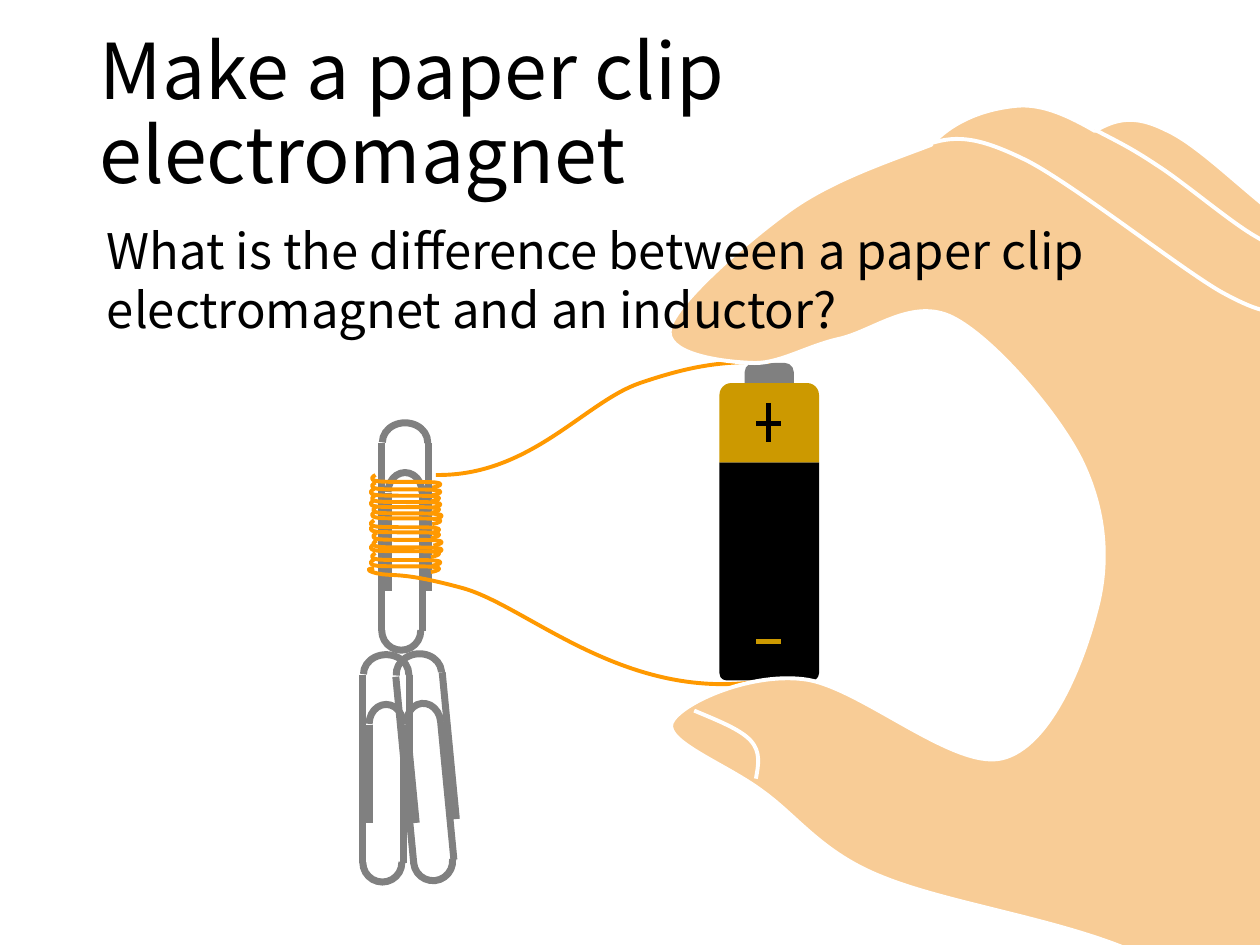
import math

from lxml import etree
from pptx import Presentation
from pptx import util as u
from pptx.dml.color import RGBColor
from pptx.enum import shapes, text
from pptx.oxml.ns import qn

COLORS = {"ink": "000000", "steel": "808080", "brass": "CC9900",
          "copper": "FF9900", "skin": "F8CC96", "edge": "FFFFFF"}
FONT = "Noto Sans CJK KR"
CM_PER_UNIT = 2.54

PALM = [
    (9.76, 10.04),
    (9.89, 10.15), (10.02, 10.21), (9.6, 9.9), (9.19, 9.59), (7.99, 8.56), (7.27, 8.16),
    (6.55, 7.76), (5.89, 7.77), (5.28, 7.52), (4.66, 7.27), (4.18, 6.9), (3.58, 6.67),
    (2.99, 6.44), (2.18, 6.32), (1.69, 6.12), (1.21, 5.93), (1.02, 5.64), (0.74, 5.44),
    (0.46, 5.23), (-0.03, 5.05), (0.02, 4.9), (0.08, 4.75), (0.62, 4.5), (1.06, 4.55),
    (1.49, 4.59), (2.25, 5.27), (2.64, 5.18), (3.03, 5.09), (3.29, 4.4), (3.39, 4.01),
    (3.5, 3.61), (3.46, 3.2), (3.27, 2.81), (3.08, 2.43), (2.57, 1.84), (2.25, 1.68),
    (1.93, 1.52), (1.62, 1.79), (1.35, 1.85), (1.08, 1.91), (0.86, 2.06), (0.64, 2.04),
    (0.41, 2.03), (-0.05, 1.97), (0.01, 1.76), (0.06, 1.56), (0.62, 1.07), (0.97, 0.82),
    (1.31, 0.58), (1.77, 0.43), (2.08, 0.31), (2.27, 0.1), (2.54, 0.02), (2.76, 0),
    (2.97, -0.02), (3.19, 0.09), (3.38, 0.2), (3.55, 0.1), (3.7, 0.07), (3.94, 0.19),
    (4.19, 0.3), (4.5, 0.62), (4.85, 0.89), (5.2, 1.15), (5.7, 1.39), (6.04, 1.75),
    (6.38, 2.1), (6.68, 2.65), (6.89, 3), (7.1, 3.36), (7.03, 3.55), (7.3, 3.88),
    (7.56, 4.21), (8.06, 4.67), (8.47, 4.98), (8.89, 5.28), (9.31, 5.41), (9.79, 5.7),
    (10.27, 5.98), (10.8, 6.32), (11.34, 6.69)]
INDEX_FINGER = [(2.07, 0.3), (2.29, 0.23), (2.47, 0.25), (2.85, 0.44), (3.23, 0.64),
                (4.03, 1.27), (4.37, 1.47), (4.71, 1.66), (4.82, 1.65), (4.88, 1.61)]
MIDDLE_FINGER = [(3.38, 0.19), (3.55, 0.28), (3.66, 0.33), (3.87, 0.47), (4.09, 0.61),
                 (4.45, 0.92), (4.66, 1.04), (4.86, 1.16), (5.04, 1.22), (5.11, 1.19)]
THUMBNAIL = [(0.2, 4.8), (0.39, 4.88), (0.57, 4.95), (0.65, 5.04),
             (0.73, 5.13), (0.71, 5.23), (0.69, 5.34)]
TOP_LEAD = [(3.19, 0), (2.83, 0), (2.6, 0.02), (2.16, 0.17),
            (1.72, 0.32), (1.29, 0.91), (0.54, 0.9)]
BOTTOM_LEAD = [(0.05, 1.64), (0.03, 1.64), (-0.05, 1.65), (0.07, 1.68), (0.19, 1.71),
               (0.25, 1.66), (0.76, 1.8), (1.28, 1.95), (2.06, 2.72), (3.16, 2.53)]
TURN = [(0, 0), (-0.02, 0.01), (-0.06, 0.04), (0.02, 0.05), (0.1, 0.06),
        (0.4, 0.05), (0.48, 0.06), (0.55, 0.07), (0.51, 0.09), (0.45, 0.1)]
TURN_STARTS = [(0.06, 0.9), (0.06, 0.96), (0.05, 1.01), (0.06, 1.06), (0.05, 1.1),
               (0.07, 1.15), (0.06, 1.19), (0.05, 1.26), (0.05, 1.3), (0.07, 1.36),
               (0.07, 1.42), (0.05, 1.45), (0.06, 1.52), (0.05, 1.57)]


def size(units):
    """Turn slide units into a length."""
    return u.Cm(units * CM_PER_UNIT)


def rgb(name):
    """Look up a colour by its role."""
    return RGBColor.from_string(COLORS[name])


def paint(part, fill=None, line=None, weight=0):
    """Set fill and outline, and drop the shadow."""
    part.shadow.inherit = False
    if fill:
        part.fill.solid()
        part.fill.fore_color.rgb = rgb(fill)
    else:
        part.fill.background()
    if line:
        part.line.color.rgb = rgb(line)
        part.line.width = u.Pt(weight)
    else:
        part.line.fill.background()


def add_preset(group, preset, box, adjustments, rotation=0, **style):
    """Add one adjusted and painted preset shape."""
    part = group.shapes.add_shape(preset, *map(size, box))
    for index, value in enumerate(adjustments):
        part.adjustments[index] = value
    part.rotation = rotation
    paint(part, **style)


def add_line(group, start, end, color, weight):
    """Add one straight line without a shadow."""
    line = group.shapes.add_connector(
        shapes.MSO_CONNECTOR.STRAIGHT, *map(size, (*start, *end)))
    line.line.color.rgb = rgb(color)
    line.line.width = u.Pt(weight)
    etree.SubElement(line._element.spPr, qn("a:effectLst"))


def add_curve(group, left, top, knots, **style):
    """Add a freeform whose segments are merged by threes into cubic curves."""
    start, *rest = [(size(left + x), size(top + y)) for x, y in knots]
    builder = group.shapes.build_freeform(*start)
    builder.add_line_segments(rest, close=False)
    curve = builder.convert_to_shape()
    outline = curve._element.spPr.find(".//" + qn("a:path"))
    segments = outline.findall(qn("a:lnTo"))
    for i in range(0, len(segments), 3):
        cubic = etree.SubElement(outline, qn("a:cubicBezTo"))
        for segment in segments[i:i + 3]:
            cubic.append(segment[0])
            outline.remove(segment)
    paint(curve, **style)


def add_battery(slide, left, top):
    """Draw the battery with its cap, poles and signs."""
    group = slide.shapes.add_group_shape()
    rounded = shapes.MSO_SHAPE.ROUND_2_SAME_RECTANGLE
    add_preset(group, rounded, (left + 0.2, top, 0.39, 0.16), (0.46, 0), fill="steel")
    add_preset(group, rounded, (left, top + 0.79, 0.79, 1.73), (0.07, 0), 180, fill="ink")
    add_preset(group, rounded, (left, top + 0.16, 0.79, 0.63), (0.15, 0), fill="brass")
    for y, color in ((2.21, "brass"), (0.48, "ink")):
        add_line(group, (left + 0.29, top + y), (left + 0.49, top + y), color, 3)
    add_line(group, (left + 0.39, top + 0.32), (left + 0.39, top + 0.63), "ink", 3)


def add_clip(slide, left, top, tilt=0):
    """Draw a paper clip turned about its middle, and return its group."""
    group = slide.shapes.add_group_shape()
    angle = math.radians(tilt)
    pivot_x, pivot_y = 0.185, 0.915

    def turned(x, y):
        """Turn a point of the clip about its middle."""
        dx, dy = x - pivot_x, y - pivot_y
        return (left + pivot_x + dx * math.cos(angle) - dy * math.sin(angle),
                top + pivot_y + dx * math.sin(angle) + dy * math.cos(angle))

    upper, lower = (162, 55.65), (52.42, 163.18)
    for x, y, height, sweep in ((0.03, 0.44, 0.27, upper), (0, 1.52, 0.31, lower),
                                (0.03, 0, 0.36, upper)):
        center_x, center_y = turned(x + 0.31 / 2, y + height / 2)
        add_preset(group, shapes.MSO_SHAPE.ARC,
                   (center_x - 0.31 / 2, center_y - height / 2, 0.31, height),
                   sweep, 270 + tilt, line="steel", weight=4)
    for x, start, end in ((0.32, 0.58, 1.68), (0, 0.19, 1.68),
                          (0.05, 0.58, 1.36), (0.37, 0.19, 1.36)):
        add_line(group, turned(x, start), turned(x, end), "steel", 4)
    return group


def add_coil(group, left, top):
    """Wind the wire and lead both ends to the battery."""
    wire = {"line": "copper", "weight": 2.25}
    for lead in (TOP_LEAD, BOTTOM_LEAD):
        add_curve(group, left, top, lead, **wire)
    for x, y in TURN_STARTS:
        add_curve(group, left + x, top + y, TURN, **wire)


def add_hand(slide, left, top):
    """Draw the hand that holds the battery."""
    group = slide.shapes.add_group_shape()
    for outline in (PALM, INDEX_FINGER, MIDDLE_FINGER, THUMBNAIL):
        add_curve(group, left, top, outline, fill="skin", line="edge", weight=2.25)


def write(holder, box, words, points):
    """Place a text shape and format its only paragraph."""
    holder.left, holder.top, holder.width, holder.height = map(size, box)
    frame = holder.text_frame
    frame.text = words
    frame.word_wrap = True
    paragraph = frame.paragraphs[0]
    paragraph.alignment = text.PP_ALIGN.LEFT
    paragraph.font.name = FONT
    paragraph.font.size = u.Pt(points)
    paragraph.font.color.rgb = rgb("ink")
    return frame


def main():
    """Build the electromagnet slide."""
    deck = Presentation()
    deck.slide_width, deck.slide_height = size(10), size(7.5)
    slide = deck.slides.add_slide(deck.slide_layouts[5])
    title = write(slide.shapes.title, (0.69, 0, 8.62, 1.85),
                  "Make a paper clip electromagnet", 44)
    title.vertical_anchor = text.MSO_ANCHOR.MIDDLE
    title.auto_size = text.MSO_AUTO_SIZE.NONE
    title.paragraphs[0].line_spacing = 0.9
    add_battery(slide, 5.71, 2.88)
    add_coil(add_clip(slide, 3.03, 3.33), 2.92, 2.87)
    add_clip(slide, 2.88, 5.17)
    add_clip(slide, 3.21, 5.16, -5.5)
    add_hand(slide, 5.31, 0.84)
    question_box = (0.75, 1.7, 8.19, 1.04)
    question = write(slide.shapes.add_textbox(*map(size, question_box)), question_box,
                     "What is the difference between a paper clip electromagnet "
                     "and an inductor?", 28)
    question.auto_size = text.MSO_AUTO_SIZE.SHAPE_TO_FIT_TEXT
    deck.save("out.pptx")


if __name__ == "__main__":
    main()
